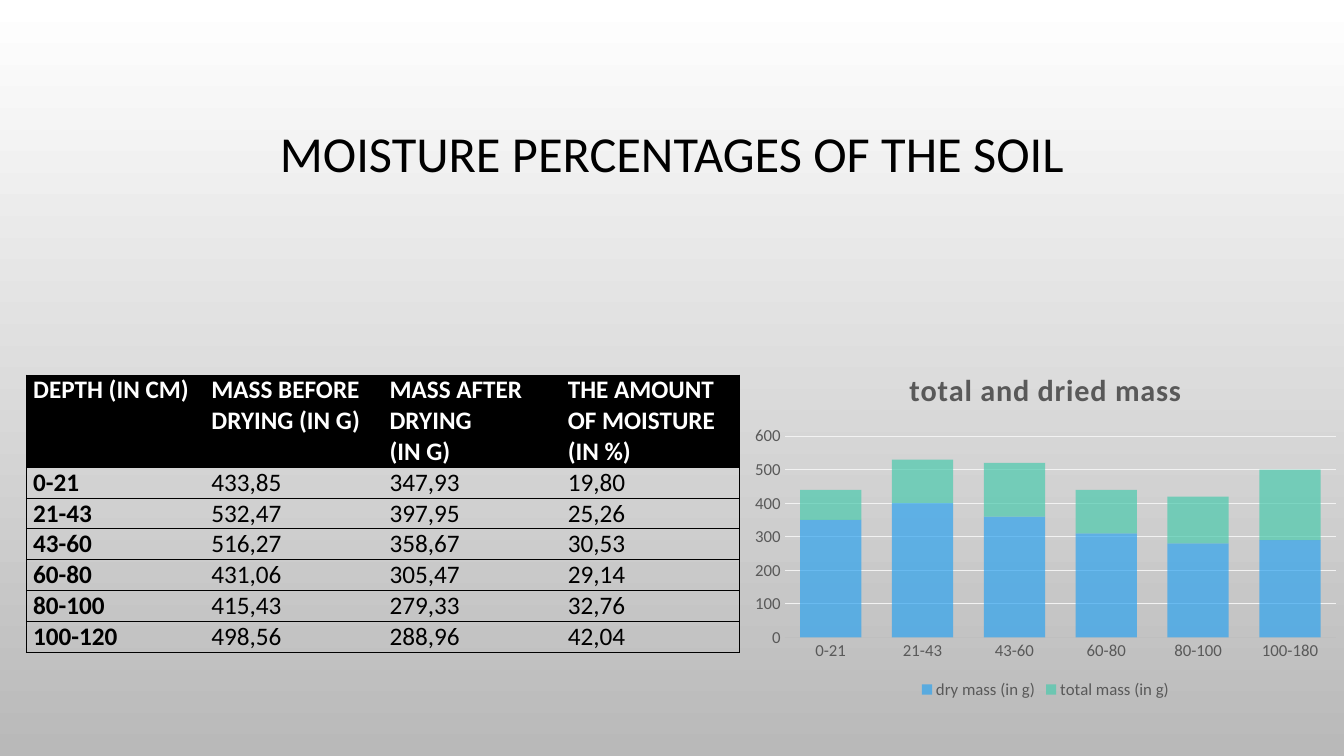
from dataclasses import dataclass

from lxml.etree import SubElement
from pptx import Presentation
from pptx.chart.data import CategoryChartData
from pptx.dml.color import RGBColor
from pptx.enum.chart import XL_CHART_TYPE as ChartType
from pptx.enum.chart import XL_LEGEND_POSITION as LegendPosition
from pptx.enum.chart import XL_TICK_MARK as TickMark
from pptx.enum.text import MSO_ANCHOR as Anchor
from pptx.enum.text import PP_ALIGN as Align
from pptx.oxml.ns import qn
from pptx.util import Inches, Pt

TITLE = "MOISTURE PERCENTAGES OF THE SOIL"
HEADERS = [
    "DEPTH (IN CM)",
    "MASS BEFORE DRYING (IN G)",
    "MASS AFTER DRYING\n(IN G)",
    "THE AMOUNT OF MOISTURE (IN %)",
]
SAMPLES = [
    ("0-21", "433,85", "347,93", "19,80"),
    ("21-43", "532,47", "397,95", "25,26"),
    ("43-60", "516,27", "358,67", "30,53"),
    ("60-80", "431,06", "305,47", "29,14"),
    ("80-100", "415,43", "279,33", "32,76"),
    ("100-120", "498,56", "288,96", "42,04"),
]
CHART_TITLE = "total and dried mass"
CHART_DEPTHS = ["0-21", "21-43", "43-60", "60-80", "80-100", "100-180"]
CHART_SERIES = [
    ("dry mass (in g)", [350, 400, 360, 310, 280, 290]),
    ("total mass (in g)", [90, 130, 160, 130, 140, 210]),
]


@dataclass(frozen=True)
class Theme:
    font: str = "Calibri"
    black: str = "000000"
    white: str = "FFFFFF"
    backdrop_end: str = "B9B9B9"
    muted: str = "595959"
    axis: str = "BFBFBF"
    grid: str = "F2F2F2"
    series: tuple = ("2FA3EE", "4BCAAD")
    series_alpha: int = 70
    title_size: float = 36
    table_size: float = 18
    chart_title_size: float = 21.6
    chart_size: float = 12
    line_width: float = 0.75


theme = Theme()


def rgb(color):
    return RGBColor.from_string(color)


def style_font(font, size, color, bold=False):
    font.name = theme.font
    font.size = Pt(size)
    font.bold = bold
    font.color.rgb = rgb(color)


def style_line(line, color):
    line.color.rgb = rgb(color)
    line.width = Pt(theme.line_width)


def set_borders(cell, visible_sides):
    properties = cell._tc.get_or_add_tcPr()
    for side in "LRTB":
        line = SubElement(properties, qn(f"a:ln{side}"), w=str(Pt(theme.line_width)))
        if side in visible_sides:
            fill = SubElement(line, qn("a:solidFill"))
            SubElement(fill, qn("a:srgbClr"), val=theme.black)
        else:
            SubElement(line, qn("a:noFill"))


def add_background(slide):
    fill = slide.background.fill
    fill.gradient()
    fill.gradient_angle = 270
    for stop, color in zip(fill.gradient_stops, (theme.white, theme.backdrop_end)):
        stop.color.rgb = rgb(color)


def add_title(slide):
    title = slide.shapes.title
    title.left, title.top = Inches(1), Inches(0.67)
    title.width, title.height = Inches(11.33), Inches(1.75)
    text_frame = title.text_frame
    text_frame.text = TITLE
    text_frame.vertical_anchor = Anchor.MIDDLE
    paragraph = text_frame.paragraphs[0]
    paragraph.alignment = Align.CENTER
    paragraph.line_spacing = 0.9
    style_font(paragraph.runs[0].font, theme.title_size, theme.black)


def add_moisture_table(slide):
    rows = [HEADERS, *SAMPLES]
    last_column = len(HEADERS) - 1
    table = slide.shapes.add_table(
        len(rows), len(HEADERS), Inches(0.26), Inches(3.72), Inches(7.07), Inches(2.7)
    ).table
    table.horz_banding = False
    for row_index, values in enumerate(rows):
        is_header = row_index == 0
        table.rows[row_index].height = Inches(0.89 if is_header else 0.3)
        for column_index, value in enumerate(values):
            cell = table.cell(row_index, column_index)
            cell.margin_left = cell.margin_right = Inches(0.07)
            cell.margin_top = cell.margin_bottom = 0
            left = "L" if column_index == 0 else ""
            right = "R" if column_index == last_column else ""
            set_borders(cell, "TB" + left + right)
            if is_header:
                cell.fill.solid()
                cell.fill.fore_color.rgb = rgb(theme.black)
            else:
                cell.fill.background()
            cell.text_frame.text = value
            color = theme.white if is_header else theme.black
            for paragraph in cell.text_frame.paragraphs:
                style_font(
                    paragraph.runs[0].font,
                    theme.table_size,
                    color,
                    is_header or column_index == 0,
                )


def add_mass_chart(slide):
    data = CategoryChartData()
    data.categories = CHART_DEPTHS
    for name, values in CHART_SERIES:
        data.add_series(name, values)
    chart = slide.shapes.add_chart(
        ChartType.COLUMN_STACKED,
        Inches(7.37), Inches(3.48), Inches(6), Inches(3.5), data,
    ).chart
    style_font(chart.font, theme.chart_size, theme.muted)

    chart.has_title = True
    chart.chart_title.include_in_layout = False
    chart.chart_title.text_frame.text = CHART_TITLE
    title_run = chart.chart_title.text_frame.paragraphs[0].runs[0]
    style_font(title_run.font, theme.chart_title_size, theme.muted, True)
    title_run.font._element.set("spc", "50")

    chart.has_legend = True
    chart.legend.position = LegendPosition.BOTTOM
    chart.legend.include_in_layout = False
    style_font(chart.legend.font, theme.chart_size, theme.muted)

    for axis in (chart.category_axis, chart.value_axis):
        axis.major_tick_mark = axis.minor_tick_mark = TickMark.NONE
        style_font(axis.tick_labels.font, theme.chart_size, theme.muted)
    style_line(chart.category_axis.format.line, theme.axis)
    value_axis = chart.value_axis
    value_axis.minimum_scale, value_axis.maximum_scale = 0, 600
    value_axis.major_unit = 100
    value_axis.format.line.fill.background()
    style_line(value_axis.major_gridlines.format.line, theme.grid)

    plot = chart.plots[0]
    plot.gap_width, plot.overlap = 50, 100
    plot.vary_by_categories = False
    for series, color in zip(plot.series, theme.series):
        series.format.fill.solid()
        series.format.fill.fore_color.rgb = rgb(color)
        for color_element in series._element.spPr.iter(qn("a:srgbClr")):
            SubElement(color_element, qn("a:alpha"), val=str(theme.series_alpha * 1000))


def main():
    presentation = Presentation()
    presentation.slide_width = Inches(13.33)
    presentation.slide_height = Inches(7.5)
    slide = presentation.slides.add_slide(presentation.slide_layouts[5])
    add_background(slide)
    add_title(slide)
    add_moisture_table(slide)
    add_mass_chart(slide)
    presentation.save("out.pptx")


if __name__ == "__main__":
    main()
